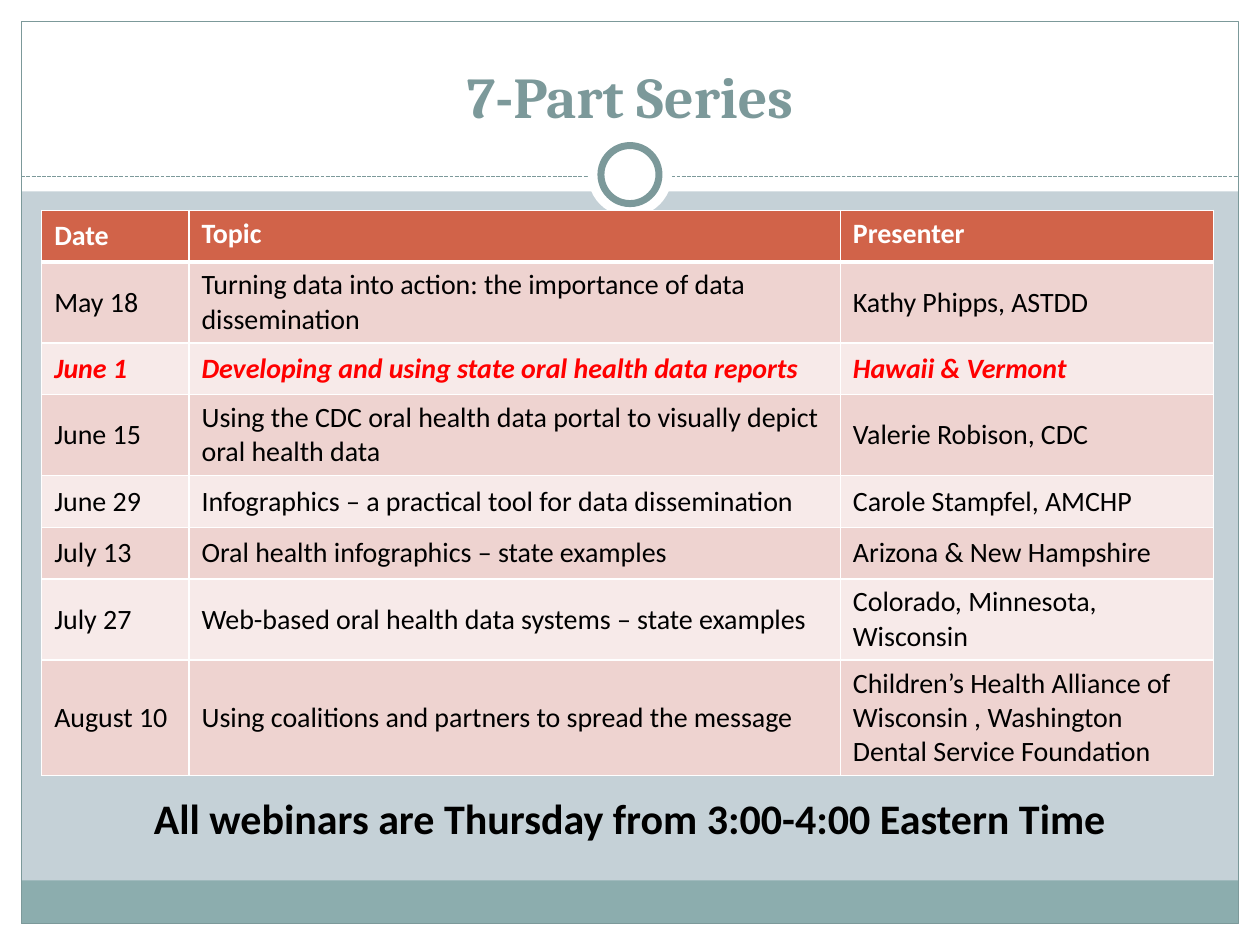
from lxml.etree import SubElement
from pptx import Presentation
from pptx.dml.color import RGBColor
from pptx.enum.dml import MSO_LINE_DASH_STYLE as Dash
from pptx.enum.shapes import MSO_CONNECTOR as Connector, MSO_SHAPE as Shape
from pptx.enum.text import MSO_ANCHOR as Anchor, MSO_AUTO_SIZE as AutoSize, PP_ALIGN as Align
from pptx.oxml.ns import qn
from pptx.util import Cm, Pt

WIDTH, HEIGHT, MARGIN = 25.4, 19.05, 0.43
WHITE, BLACK, RED = "FFFFFF", "000000", "FF0000"
TEAL, PALE_TEAL, BACKGROUND = "7C999A", "8CADAE", "C5D1D7"
HEADER_FILL, ROW_FILLS = "D16349", ("EED3D0", "F7EAE9")

COLUMN_WIDTHS = (2.97, 13.13, 7.52)
ROW_HEIGHT = 1.04
HIGHLIGHTED_ROW = 2
SCHEDULE = [
    ("Date", "Topic", "Presenter"),
    ("May 18", "Turning data into action: the importance of data dissemination",
     "Kathy Phipps, ASTDD"),
    ("June 1", "Developing and using state oral health data reports", "Hawaii & Vermont"),
    ("June 15", "Using the CDC oral health data portal to visually depict oral health data",
     "Valerie Robison, CDC"),
    ("June 29", "Infographics – a practical tool for data dissemination",
     "Carole Stampfel, AMCHP"),
    ("July 13", "Oral health infographics – state examples", "Arizona & New Hampshire"),
    ("July 27", "Web-based oral health data systems – state examples",
     "Colorado, Minnesota, Wisconsin"),
    ("August 10", "Using coalitions and partners to spread the message",
     "Children’s Health Alliance of Wisconsin , Washington Dental Service Foundation"),
]


def color(value):
    return RGBColor.from_string(value)


def set_font(paragraph, name, size, value, bold=False, italic=False):
    font = paragraph.font
    font.name, font.size, font.bold, font.italic = name, Pt(size), bold, italic
    font.color.rgb = color(value)


def add_box(slide, kind, box, fill=None, line=None, line_width=0.75):
    shape = slide.shapes.add_shape(kind, *map(Cm, box))
    shape.shadow.inherit = False
    if fill:
        shape.fill.solid()
        shape.fill.fore_color.rgb = color(fill)
    else:
        shape.fill.background()
    if line:
        shape.line.color.rgb = color(line)
        shape.line.width = Pt(line_width)
    else:
        shape.line.fill.background()


def add_frame(slide, left, top, width, height):
    """White margins, the footer band and the outline around the given box."""
    right, bottom = left + width, top + height
    for box in (
        (0, bottom, WIDTH, HEIGHT - bottom),
        (0, 0, WIDTH, 3.86),
        (0, 0, left, HEIGHT),
        (right, 0, WIDTH - right, HEIGHT),
    ):
        add_box(slide, Shape.RECTANGLE, box, WHITE)
    add_box(slide, Shape.RECTANGLE, (left, bottom - 0.87, width, 0.87), PALE_TEAL)
    add_box(slide, Shape.RECTANGLE, (left, top, width, height), line=TEAL)


def add_divider(slide, left, top, width):
    """Dashed rule with a ring at its middle."""
    rule = slide.shapes.add_connector(
        Connector.STRAIGHT, Cm(left), Cm(top), Cm(left + width), Cm(top))
    rule.line.color.rgb = color(TEAL)
    rule.line.width = Pt(0.75)
    rule.line.dash_style = Dash.SQUARE_DOT
    SubElement(rule._element.spPr, qn("a:effectLst"))
    center_x, center_y = left + width / 2, top - 0.04
    for diameter, line in ((1.7, None), (1.17, TEAL)):
        box = (center_x - diameter / 2, center_y - diameter / 2, diameter, diameter)
        add_box(slide, Shape.OVAL, box, WHITE, line, 4)


def place_title(slide, text, left, top, width, height):
    title = slide.shapes.title
    title.left, title.top, title.width, title.height = map(Cm, (left, top, width, height))
    title.text_frame.text = text
    title.text_frame.vertical_anchor = Anchor.BOTTOM
    paragraph = title.text_frame.paragraphs[0]
    paragraph.alignment = Align.CENTER
    set_font(paragraph, "Cambria", 33, TEAL, bold=True)
    slide.shapes._spTree.append(title._element)  # bring in front of the white header


def set_borders(cell, bottom_width):
    properties = cell._tc.get_or_add_tcPr()
    widths = {"a:lnL": 1, "a:lnR": 1, "a:lnT": 1, "a:lnB": bottom_width}
    for position, (tag, width) in enumerate(widths.items()):
        line = properties.makeelement(qn(tag), {"w": str(Pt(width))})
        SubElement(SubElement(line, qn("a:solidFill")), qn("a:srgbClr"), val=WHITE)
        properties.insert(position, line)


def add_schedule(slide, left, top):
    table = slide.shapes.add_table(
        len(SCHEDULE), len(COLUMN_WIDTHS), Cm(left), Cm(top),
        Cm(sum(COLUMN_WIDTHS)), Cm(ROW_HEIGHT * len(SCHEDULE))).table
    for column, width in zip(table.columns, COLUMN_WIDTHS):
        column.width = Cm(width)
    for row_index, texts in enumerate(SCHEDULE):
        header, highlighted = row_index == 0, row_index == HIGHLIGHTED_ROW
        fill = HEADER_FILL if header else ROW_FILLS[(row_index - 1) % 2]
        text_color = WHITE if header else RED if highlighted else BLACK
        for column_index, text in enumerate(texts):
            cell = table.cell(row_index, column_index)
            cell.text = text
            top_anchored = header and column_index > 0
            cell.vertical_anchor = Anchor.TOP if top_anchored else Anchor.MIDDLE
            cell.fill.solid()
            cell.fill.fore_color.rgb = color(fill)
            set_borders(cell, bottom_width=3 if header else 1)
            set_font(cell.text_frame.paragraphs[0], "Calibri", 16, text_color,
                     bold=header or highlighted, italic=highlighted)


def add_note(slide, text, left, top, width, height):
    frame = slide.shapes.add_textbox(*map(Cm, (left, top, width, height))).text_frame
    frame.word_wrap = False
    frame.auto_size = AutoSize.SHAPE_TO_FIT_TEXT
    frame.text = text
    paragraph = frame.paragraphs[0]
    paragraph.alignment = Align.CENTER
    set_font(paragraph, "Calibri", 24, BLACK, bold=True)


def main():
    presentation = Presentation()
    presentation.slide_width, presentation.slide_height = Cm(WIDTH), Cm(HEIGHT)
    slide = presentation.slides.add_slide(presentation.slide_layouts[5])
    slide.background.fill.solid()
    slide.background.fill.fore_color.rgb = color(BACKGROUND)
    inner_width = WIDTH - 2 * MARGIN
    add_frame(slide, MARGIN, MARGIN, inner_width, HEIGHT - 2 * MARGIN)
    add_divider(slide, MARGIN, 3.56, inner_width)
    place_title(slide, "7-Part Series", 0.85, 0.64, 23.7, 2.11)
    add_schedule(slide, 0.84, 4.24)
    add_note(slide, "All webinars are Thursday from 3:00-4:00 Eastern Time",
             2.76, 15.85, 19.88, 1.27)
    presentation.save("out.pptx")


if __name__ == "__main__":
    main()
